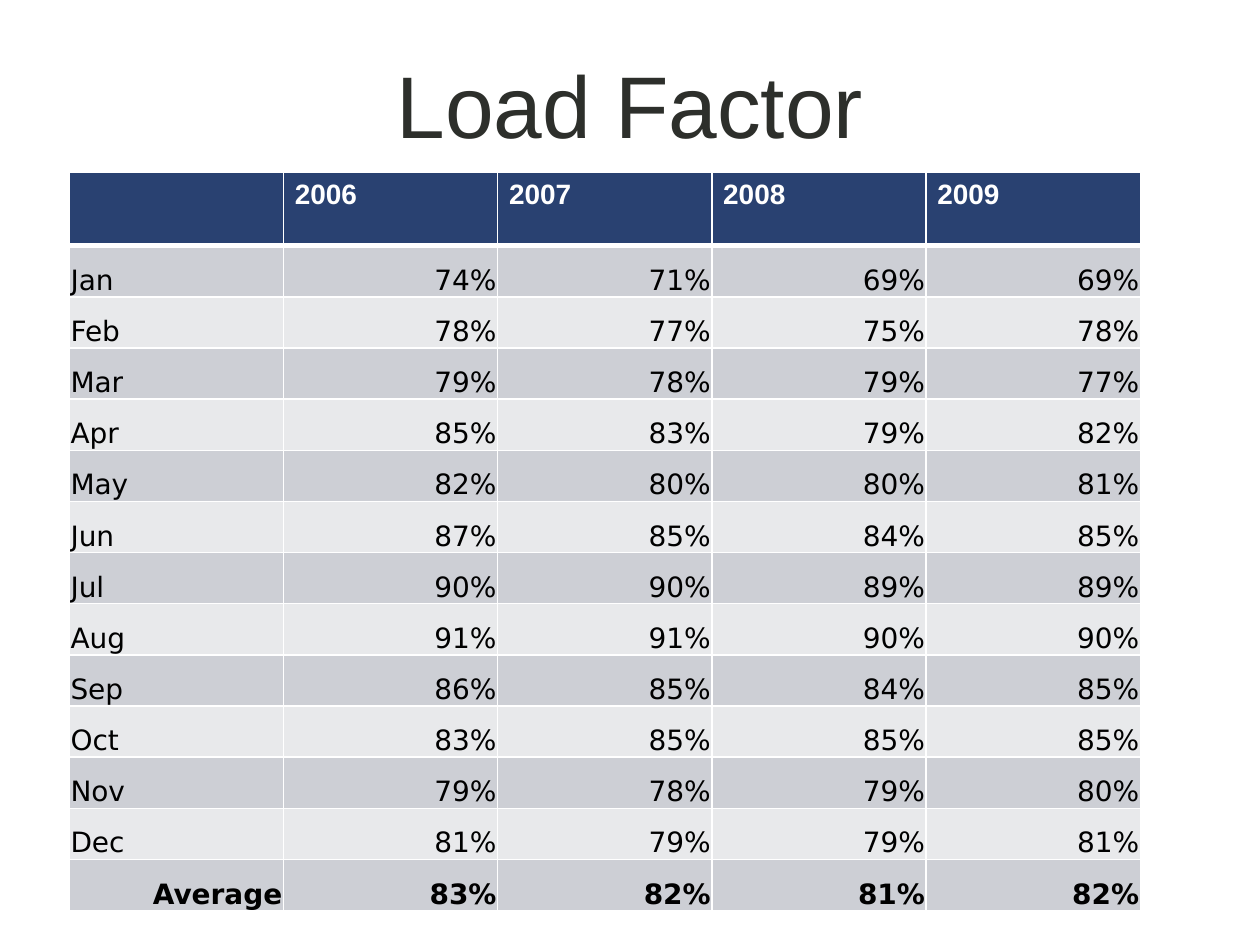
from dataclasses import dataclass

from lxml.etree import SubElement
from pptx import Presentation
from pptx.dml.color import RGBColor
from pptx.enum.text import MSO_ANCHOR as Anchor, PP_ALIGN as Align
from pptx.oxml.ns import qn
from pptx.table import _Cell as Cell
from pptx.util import Inches, Pt

WHITE = RGBColor(0xFF, 0xFF, 0xFF)
BLACK = RGBColor(0x00, 0x00, 0x00)
CHARCOAL = RGBColor(0x2D, 0x2F, 0x2B)
NAVY = RGBColor(0x29, 0x41, 0x71)
DARK_BAND = RGBColor(0xCD, 0xCF, 0xD5)
LIGHT_BAND = RGBColor(0xE8, 0xE9, 0xEB)

TABLE_WIDTH, TABLE_HEIGHT = 8.5, 5.86
HEADER_HEIGHT = 0.58
THIN, THICK = 1, 3

YEARS = ["2006", "2007", "2008", "2009"]


@dataclass
class LoadRow:
    label: str
    percents: tuple[int, ...]
    is_average: bool = False


@dataclass
class CellStyle:
    font: str
    color: RGBColor
    anchor: Anchor
    margins: tuple[float, float, float, float]  # left, top, right, bottom


HEADER_STYLE = CellStyle("Arial", WHITE, Anchor.TOP, (0.09, 0.05, 0.09, 0.05))
BODY_STYLE = CellStyle("DejaVu Sans", BLACK, Anchor.BOTTOM, (0.01, 0.01, 0.01, 0))

LOAD_ROWS = [
    LoadRow("Jan", (74, 71, 69, 69)),
    LoadRow("Feb", (78, 77, 75, 78)),
    LoadRow("Mar", (79, 78, 79, 77)),
    LoadRow("Apr", (85, 83, 79, 82)),
    LoadRow("May", (82, 80, 80, 81)),
    LoadRow("Jun", (87, 85, 84, 85)),
    LoadRow("Jul", (90, 90, 89, 89)),
    LoadRow("Aug", (91, 91, 90, 90)),
    LoadRow("Sep", (86, 85, 84, 85)),
    LoadRow("Oct", (83, 85, 85, 85)),
    LoadRow("Nov", (79, 78, 79, 80)),
    LoadRow("Dec", (81, 79, 79, 81)),
    LoadRow("Average", (83, 82, 81, 82), is_average=True),
]


def set_borders(cell: Cell, top: float, bottom: float) -> None:
    """Draw white cell borders, widths in points; the sides are thin."""
    properties = cell._tc.get_or_add_tcPr()
    for side, width in (("L", THIN), ("R", THIN), ("T", top), ("B", bottom)):
        line = SubElement(properties, qn(f"a:ln{side}"), w=str(Pt(width)))
        fill = SubElement(line, qn("a:solidFill"))
        SubElement(fill, qn("a:srgbClr"), val=str(WHITE))


def fill_cell(cell: Cell, text: str, style: CellStyle, fill: RGBColor,
              align: Align, bold: bool) -> None:
    cell.fill.solid()
    cell.fill.fore_color.rgb = fill
    cell.vertical_anchor = style.anchor
    left, top, right, bottom = map(Inches, style.margins)
    cell.margin_left, cell.margin_top = left, top
    cell.margin_right, cell.margin_bottom = right, bottom
    cell.text_frame.text = text
    paragraph = cell.text_frame.paragraphs[0]
    paragraph.alignment = align
    font = paragraph.font
    font.name, font.size, font.bold = style.font, Pt(16), bold
    font.color.rgb = style.color
    for run in paragraph.runs:
        run.font.name, run.font.size, run.font.bold = style.font, Pt(16), bold
        run.font.color.rgb = style.color


def add_title(slide) -> None:
    title = slide.shapes.title
    title.left, title.top = Inches(0.75), Inches(0.07)
    title.width, title.height = Inches(8.5), Inches(1.5)
    title.text_frame.text = "Load Factor"
    title.text_frame.vertical_anchor = Anchor.MIDDLE
    paragraph = title.text_frame.paragraphs[0]
    paragraph.alignment = Align.CENTER
    font = paragraph.runs[0].font
    font.name, font.size = "Arial", Pt(50)
    font.color.rgb = CHARCOAL


def add_load_table(slide) -> None:
    table = slide.shapes.add_table(
        len(LOAD_ROWS) + 1, len(YEARS) + 1, Inches(0.55), Inches(1.37),
        Inches(TABLE_WIDTH), Inches(TABLE_HEIGHT)).table
    body_height = (TABLE_HEIGHT - HEADER_HEIGHT) / len(LOAD_ROWS)
    for index, row in enumerate(table.rows):
        row.height = Inches(body_height if index else HEADER_HEIGHT)
        for cell in row.cells:
            set_borders(cell, top=THICK if index == 1 else THIN,
                        bottom=THICK if index == 0 else THIN)

    for column, year in enumerate(["", *YEARS]):
        fill_cell(table.cell(0, column), year, HEADER_STYLE, NAVY, Align.LEFT, True)

    for index, load in enumerate(LOAD_ROWS, start=1):
        band = DARK_BAND if index % 2 else LIGHT_BAND
        label_align = Align.RIGHT if load.is_average else Align.LEFT
        fill_cell(table.cell(index, 0), load.label, BODY_STYLE, band,
                  label_align, load.is_average)
        for column, percent in enumerate(load.percents, start=1):
            fill_cell(table.cell(index, column), f"{percent}%", BODY_STYLE, band,
                      Align.RIGHT, load.is_average)


def main() -> None:
    presentation = Presentation()
    presentation.slide_width, presentation.slide_height = Inches(10), Inches(7.5)
    slide = presentation.slides.add_slide(presentation.slide_layouts[5])
    add_title(slide)
    add_load_table(slide)
    presentation.save("out.pptx")


if __name__ == "__main__":
    main()
